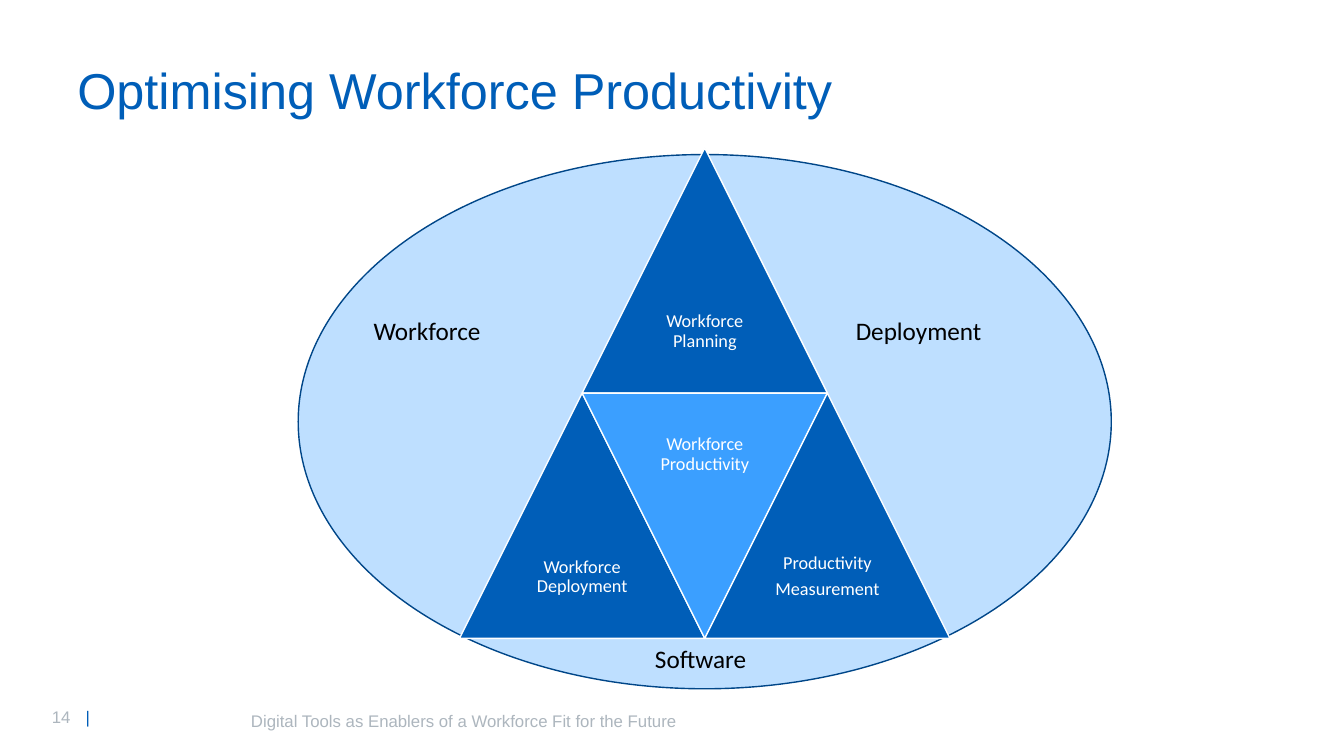
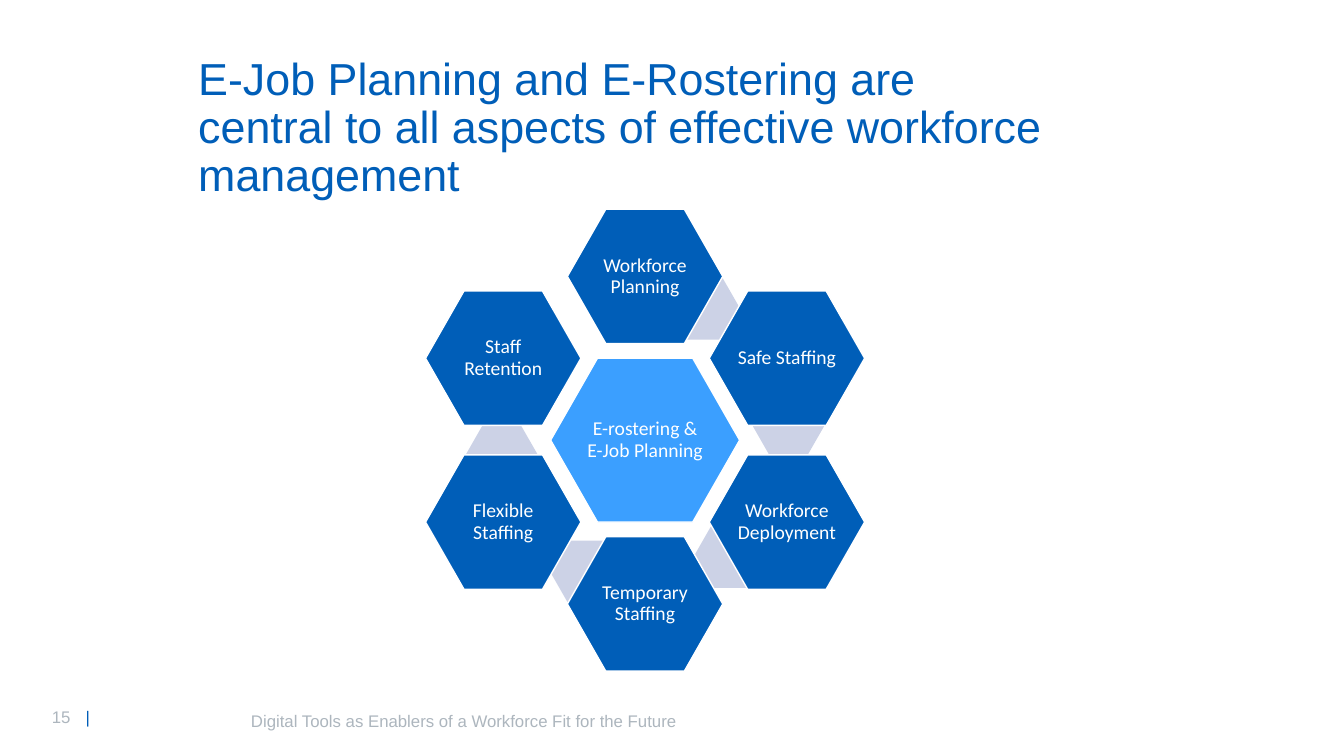
import math

import pptx
import pptx.dml.color
import pptx.enum.shapes
import pptx.enum.text
import pptx.util

SHAPE = pptx.enum.shapes.MSO_SHAPE
ALIGN = pptx.enum.text.PP_ALIGN
ANCHOR = pptx.enum.text.MSO_ANCHOR
AUTO_SIZE = pptx.enum.text.MSO_AUTO_SIZE

# Grid of square cells covering the slide
COLUMNS, ROWS = 160, 90
CELL = pptx.util.Inches(7.5) // ROWS

BLUE, BRIGHT, PALE, NAVY = "005EB8", "3B9FFF", "BEDFFF", "004688"
LINK, GREY, WHITE, BLACK = "CCD2E6", "ADB6BE", "FFFFFF", "000000"
HEADING_FONT, DIAGRAM_FONT = "Arial", "Calibri"
FOOTER = "Digital Tools as Enablers of a Workforce Fit for the Future"


def color(hex_string):
    return pptx.dml.color.RGBColor.from_string(hex_string)


def cells(*lengths):
    return [round(length * CELL) for length in lengths]


class Deck:
    """Holds the shared style and the current slide; lengths are grid cells."""

    def __init__(self):
        self.file = pptx.Presentation()
        self.file.slide_width, self.file.slide_height = cells(COLUMNS, ROWS)
        self.page = None

    def set_text(self, box, text, size, font, ink, align=ALIGN.LEFT,
                 anchor=ANCHOR.TOP, line_spacing=1.0, space_after=0, inset=None):
        frame = box.text_frame
        frame.text = text
        frame.word_wrap = True
        frame.auto_size = AUTO_SIZE.NONE
        frame.vertical_anchor = anchor
        if inset is not None:
            frame.margin_left = frame.margin_right = pptx.util.Inches(inset)
            frame.margin_top = frame.margin_bottom = pptx.util.Inches(inset)
        for para in frame.paragraphs:
            para.alignment = align
            para.line_spacing = line_spacing
            para.space_before = pptx.util.Pt(0)
            para.space_after = pptx.util.Pt(space_after)
            for span in para.runs:
                span.font.size = pptx.util.Pt(size)
                span.font.name = font
                span.font.color.rgb = color(ink)

    def add_page(self, number, title, place, size):
        self.page = self.file.slides.add_slide(self.file.slide_layouts[5])
        heading = self.page.shapes.title
        heading.left, heading.top, heading.width, heading.height = cells(*place)
        self.set_text(heading, title, size, HEADING_FONT, BLUE, line_spacing=0.9)
        # Footer: page number, divider and running title
        self.label(str(number), (5, 83.6, 6, 3.6), 12, HEADING_FONT, GREY)
        self.label("|", (9, 83.6, 4, 3.6), 12, HEADING_FONT, BLUE)
        self.label(FOOTER, (28.7, 83.4, 54.3, 4.8), 12, HEADING_FONT, GREY,
                   anchor=ANCHOR.MIDDLE)

    def label(self, text, place, size=18, font=DIAGRAM_FONT, ink=BLACK, **style):
        box = self.page.shapes.add_textbox(*cells(*place))
        self.set_text(box, text, size, font, ink, **style)

    def shape(self, kind, place, fill, line=None, text="", size=14, inset=0.02):
        box = self.page.shapes.add_shape(kind, *cells(*place))
        box.shadow.inherit = False
        box.fill.solid()
        box.fill.fore_color.rgb = color(fill)
        if line:
            box.line.color.rgb = color(line)
            box.line.width = pptx.util.Pt(1)
        else:
            box.line.fill.background()
        if text:
            self.set_text(box, text, size, DIAGRAM_FONT, WHITE, ALIGN.CENTER,
                          ANCHOR.MIDDLE, 0.9, 4.5, inset)
        return box

    def hexagon(self, middle, width, height, fill, line=None, text=""):
        place = (middle[0] - width / 2, middle[1] - height / 2, width, height)
        box = self.shape(SHAPE.HEXAGON, place, fill, line, text)
        box.adjustments[0] = 0.286

    def save(self):
        self.file.save("out.pptx")


def around(center, radius, degrees):
    """Point on a circle, clockwise from the top."""
    angle = math.radians(degrees)
    return (center[0] + radius * math.sin(angle),
            center[1] - radius * math.cos(angle))


def productivity_page(deck):
    deck.add_page(14, "Optimising Workforce Productivity", (8, 7.2, 115, 8), 36)
    deck.shape(SHAPE.OVAL, (35.5, 18.4, 96.8, 63.6), PALE, NAVY)

    # Large triangle made of four: half-sides from the apex, row, shape
    side, apex, top = 29.2, 83.9, 17.6
    pieces = [
        (0, 0, SHAPE.ISOSCELES_TRIANGLE, BLUE, "Workforce Planning"),
        (-1, 1, SHAPE.ISOSCELES_TRIANGLE, BLUE, "Workforce Deployment"),
        (0, 1, SHAPE.FLOWCHART_MERGE, BRIGHT, "Workforce Productivity"),
        (1, 1, SHAPE.ISOSCELES_TRIANGLE, BLUE, "Productivity\nMeasurement"),
    ]
    for step, row, kind, fill, text in pieces:
        place = (apex + (step - 1) * side / 2, top + row * side, side, side)
        deck.shape(kind, place, fill, WHITE, text, 13, 0.05)

    # Names of the three sides
    for text, left, top in [("Workforce", 43.3, 37), ("Deployment", 100.7, 37),
                            ("Software", 76.8, 76)]:
        deck.label(text, (left, top, 25, 4.8))


def planning_page(deck):
    deck.add_page(15, "E-Job Planning and E-Rostering are central to all aspects "
                  "of effective workforce management", (22.4, 6.1, 103.3, 18), 32)
    center = (76.8, 52.4)
    topics = ["Workforce Planning", "Safe Staffing", "Workforce Deployment",
              "Temporary Staffing", "Flexible Staffing", "Staff Retention"]
    turn = 360 / len(topics)

    # Links peek out between neighbouring topics
    for index in range(len(topics) - 1):
        deck.hexagon(around(center, 17.15, 24.4 + index * turn), 8.5, 7.3, LINK)

    # Core and the ring of topics
    deck.hexagon(center, 22.5, 19.5, BRIGHT, WHITE, "E-rostering & E-Job Planning")
    for index, topic in enumerate(topics):
        deck.hexagon(around(center, 19.5, index * turn), 18.5, 16, BLUE, WHITE, topic)


def main():
    deck = Deck()
    productivity_page(deck)
    planning_page(deck)
    deck.save()


if __name__ == "__main__":
    main()
